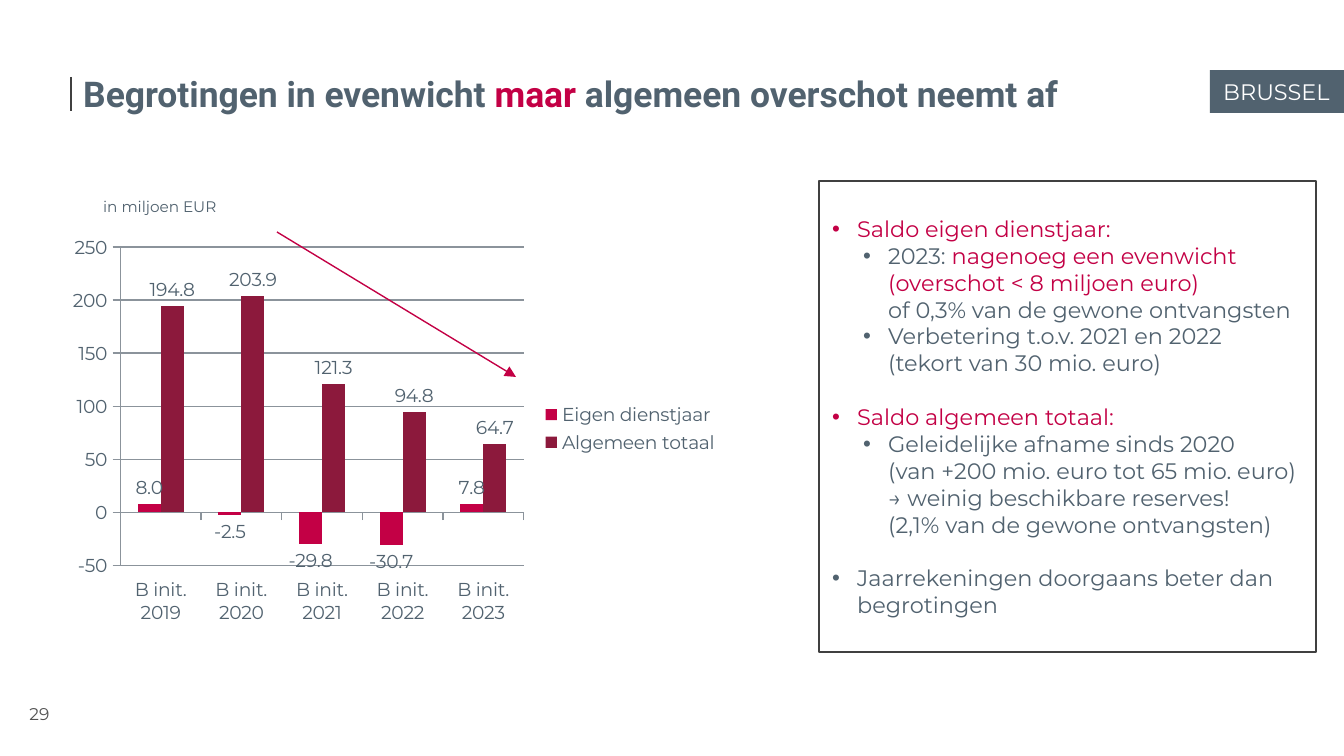
from lxml import etree
from pptx import Presentation
from pptx import util as u
from pptx.chart.data import CategoryChartData
from pptx.dml.color import RGBColor
from pptx.enum import chart as ch, shapes, text
from pptx.oxml import parse_xml
from pptx.oxml.ns import nsdecls, qn

PX = 914400 / 134.4
COLOURS = {k: RGBColor.from_string(v) for k, v in {
    "slate": "51626F", "red": "C30045", "wine": "8C193C", "dark": "404040",
    "grid": "8B939B", "number": "535353", "white": "FFFFFF"}.items()}


def px(*lengths):
    return [u.Emu(round(n * PX)) for n in lengths]


def add_run(paragraph, words, size, colour, font="Montserrat", bold=False):
    run = paragraph.add_run()
    run.text = words
    run.font.size = u.Pt(size)
    run.font.name = font
    run.font.bold = bold
    run.font.color.rgb = COLOURS[colour]


prs = Presentation()
prs.slide_width, prs.slide_height = px(1344, 756)
slide = prs.slides.add_slide(prs.slide_layouts[6])

balances = CategoryChartData(number_format="0.0")
balances.categories = [f"B init. {year}" for year in range(2019, 2024)]
balances.add_series("Eigen dienstjaar", (8.0, -2.5, -29.8, -30.7, 7.8))
balances.add_series("Algemeen totaal", (194.8, 203.9, 121.3, 94.8, 64.7))
chart = slide.shapes.add_chart(
    ch.XL_CHART_TYPE.COLUMN_CLUSTERED, *px(60, 227, 672, 403), balances).chart
chart.has_title = False
chart.font.size = u.Pt(10)
chart.font.name = "Montserrat"
chart.font.color.rgb = COLOURS["slate"]
chart.has_legend = True
chart.legend.position = ch.XL_LEGEND_POSITION.RIGHT
chart.legend.include_in_layout = False

years, amounts = chart.category_axis, chart.value_axis
years.tick_label_position = ch.XL_TICK_LABEL_POSITION.LOW
amounts.minimum_scale, amounts.maximum_scale, amounts.major_unit = -50, 250, 50
amounts.tick_labels.number_format = "0"
amounts.tick_labels.number_format_is_linked = False
amounts.has_major_gridlines = True
for line in (years.format.line, amounts.format.line, amounts.major_gridlines.format.line):
    line.color.rgb = COLOURS["grid"]
    line.width = u.Pt(0.75)
for axis in (years, amounts):
    axis.major_tick_mark = ch.XL_TICK_MARK.OUTSIDE
    axis.minor_tick_mark = ch.XL_TICK_MARK.NONE

columns = chart.plots[0]
columns.gap_width = 150
columns.overlap = 0
columns.vary_by_categories = False
for series, colour in zip(columns.series, ("red", "wine")):
    series.invert_if_negative = False
    series.format.fill.solid()
    series.format.fill.fore_color.rgb = COLOURS[colour]
    labels = series.data_labels
    labels.show_value = True
    labels.position = ch.XL_LABEL_POSITION.OUTSIDE_END
    labels.number_format = "0.0"
    labels.number_format_is_linked = False

plot_area = chart.element.find(".//" + qn("c:plotArea"))
for layout in plot_area.findall(qn("c:layout")):
    plot_area.remove(layout)
plot_area.insert(0, parse_xml(
    f'<c:layout {nsdecls("c")}><c:manualLayout><c:layoutTarget val="inner"/>'
    '<c:xMode val="edge"/><c:yMode val="edge"/><c:x val="0.09"/><c:y val="0.05"/>'
    '<c:w val="0.6"/><c:h val="0.79"/></c:manualLayout></c:layout>'))

for ends, colour, arrow in (((71, 77, 71, 111), "dark", False),
                            ((277, 232, 516, 377), "red", True)):
    rule = slide.shapes.add_connector(shapes.MSO_CONNECTOR.STRAIGHT, *px(*ends))
    rule.line.color.rgb = COLOURS[colour]
    rule.line.width = u.Pt(0.75)
    if arrow:
        etree.SubElement(rule.line._get_or_add_ln(), qn("a:tailEnd"), type="triangle")
    etree.SubElement(rule._element.spPr, qn("a:effectLst"))

title = slide.shapes.add_textbox(*px(70, 70, 1120, 46)).text_frame
title.word_wrap = True
title.vertical_anchor = text.MSO_ANCHOR.MIDDLE
for words, colour in (("Begrotingen in evenwicht ", "slate"), ("maar ", "red"),
                      ("algemeen overschot neemt af", "slate")):
    add_run(title.paragraphs[0], words, 19, colour, "Roboto", True)

unit = slide.shapes.add_textbox(*px(90, 181, 169, 38)).text_frame
unit.word_wrap = True
unit.paragraphs[0].line_spacing = 1.5
add_run(unit.paragraphs[0], "in miljoen EUR", 8.2, "slate")

page = slide.shapes.add_textbox(*px(16, 699, 47, 31)).text_frame
page.word_wrap = True
page.margin_left = page.margin_right = page.margin_top = page.margin_bottom = px(5)[0]
page.paragraphs[0].alignment = text.PP_ALIGN.CENTER
add_run(page.paragraphs[0], "29", 9.1, "number")

region = slide.shapes.add_shape(shapes.MSO_SHAPE.RECTANGLE, *px(1210, 70, 134, 43))
region.shadow.inherit = False
region.fill.solid()
region.fill.fore_color.rgb = COLOURS["slate"]
region.line.fill.background()
region.text_frame.word_wrap = False
region.text_frame.paragraphs[0].alignment = text.PP_ALIGN.LEFT
add_run(region.text_frame.paragraphs[0], "BRUSSEL", 12, "white")

findings = slide.shapes.add_shape(shapes.MSO_SHAPE.RECTANGLE, *px(819, 181, 497, 471))
findings.shadow.inherit = False
findings.fill.background()
findings.line.color.rgb = COLOURS["dark"]
findings.line.width = u.Pt(0.75)
frame = findings.text_frame
frame.word_wrap = True
frame.vertical_anchor = text.MSO_ANCHOR.TOP
frame.margin_top = px(34)[0]
points = [
    (0, [[("Saldo eigen dienstjaar:", "red")]]),
    (1, [[("2023: ", "slate"), ("nagenoeg een evenwicht", "red")],
         [("(overschot < 8 miljoen euro)", "red")],
         [("of 0,3% van de gewone ontvangsten", "slate")]]),
    (1, [[("Verbetering t.o.v. 2021 en 2022", "slate")],
         [("(tekort van 30 mio. euro)", "slate")]]),
    (0, [[("Saldo algemeen totaal:", "red")]]),
    (1, [[("Geleidelijke afname sinds 2020", "slate")],
         [("(van +200 mio. euro tot 65 mio. euro)", "slate")],
         [("→ weinig beschikbare reserves!", "slate")],
         [("(2,1% van de gewone ontvangsten)", "slate")]]),
    (0, [[("Jaarrekeningen doorgaans beter dan begrotingen", "slate")]]),
]
for order, (level, rows) in enumerate(points):
    point = frame.add_paragraph() if order else frame.paragraphs[0]
    properties = point._p.get_or_add_pPr()
    left, hanging = px((25, 56)[level], -25)
    properties.set("marL", str(left))
    properties.set("indent", str(hanging))
    etree.SubElement(properties, qn("a:buFont"), typeface="Arial")
    etree.SubElement(properties, qn("a:buChar"), char="•")
    point.level = level
    point.alignment = text.PP_ALIGN.LEFT
    point.line_spacing = u.Pt(14.4)
    if order and level == 0:
        point.space_before = u.Pt(14.4)
    for row_number, row in enumerate(rows):
        if row_number:
            point.add_line_break()
        for words, colour in row:
            add_run(point, words, 12, colour)

prs.save("out.pptx")
